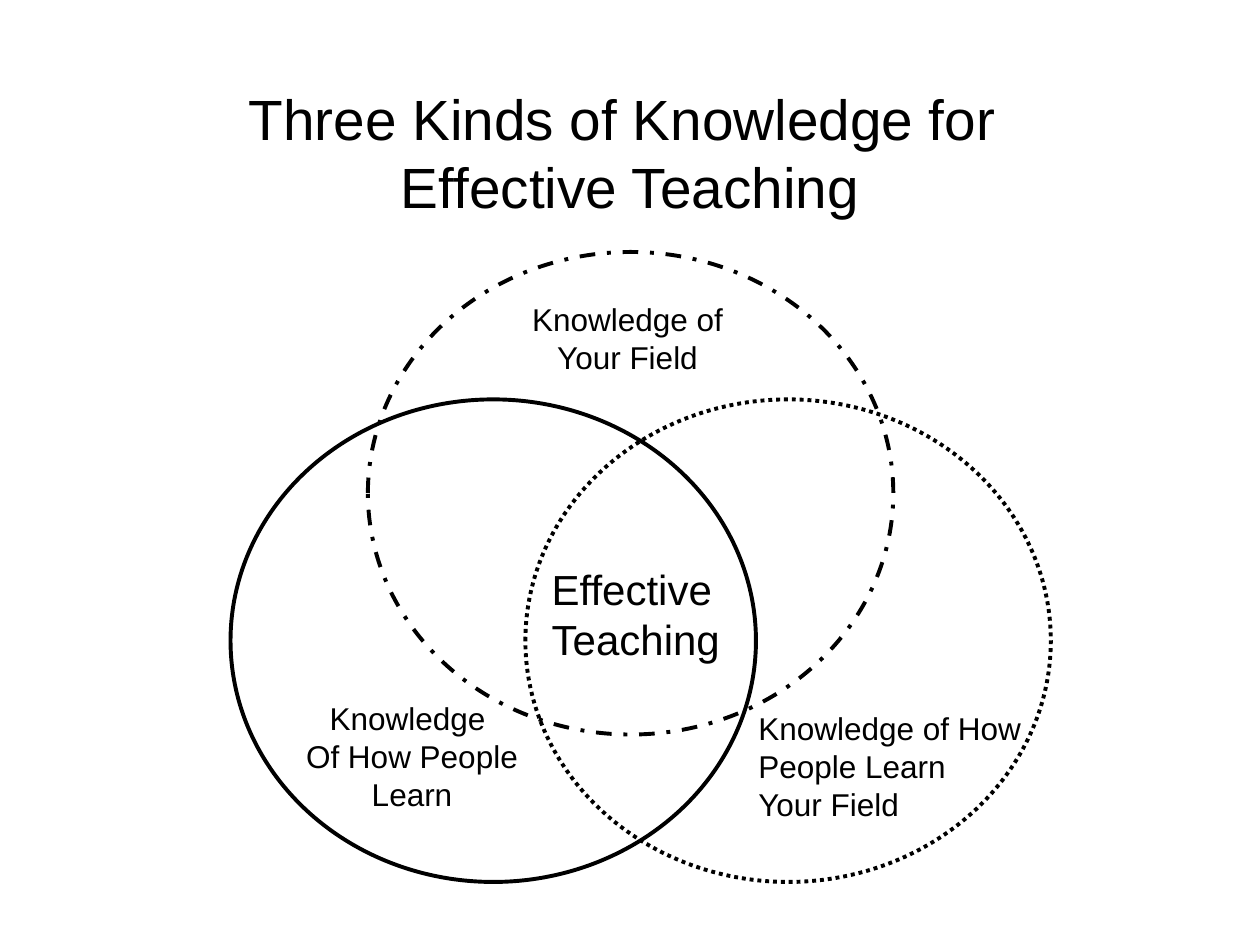
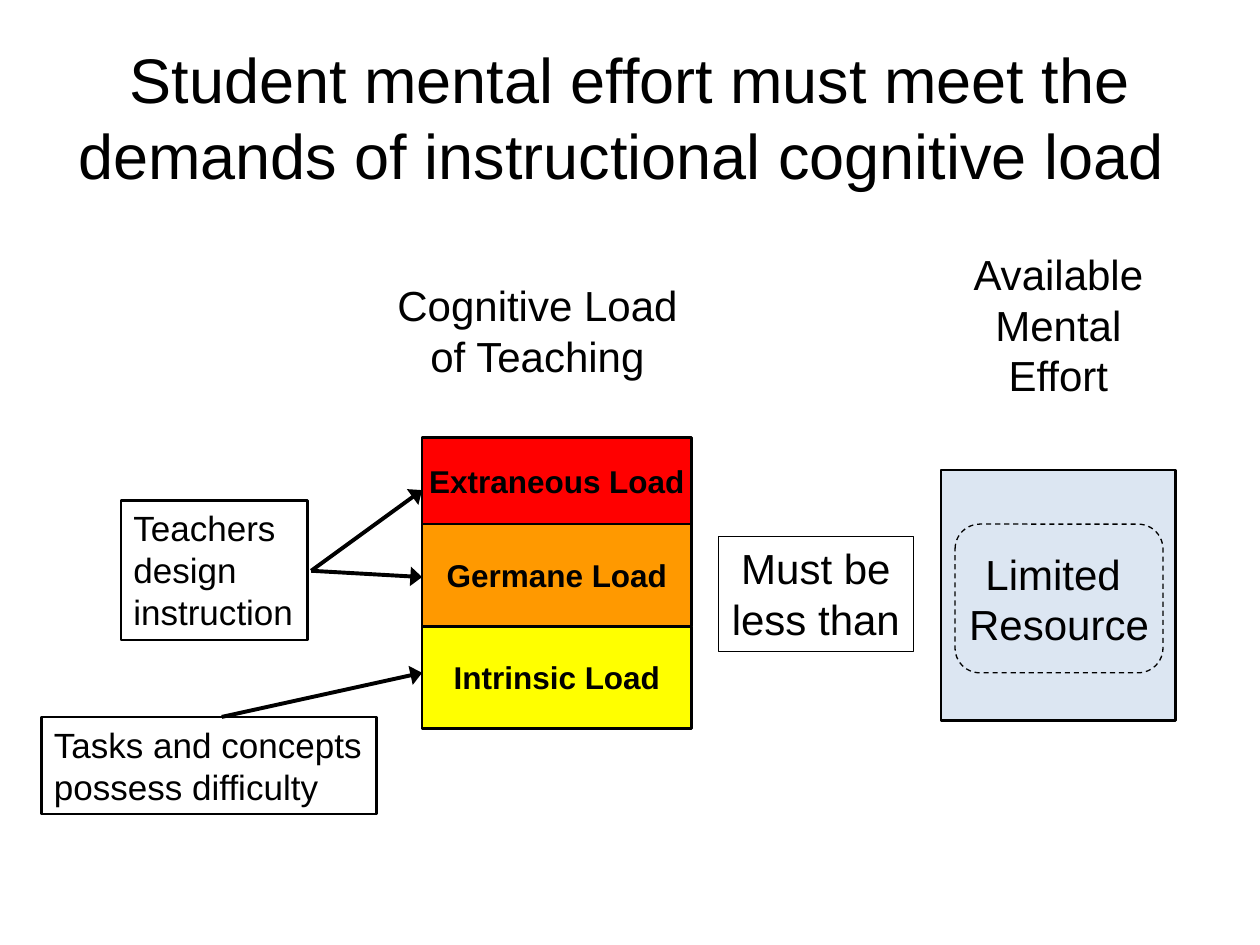
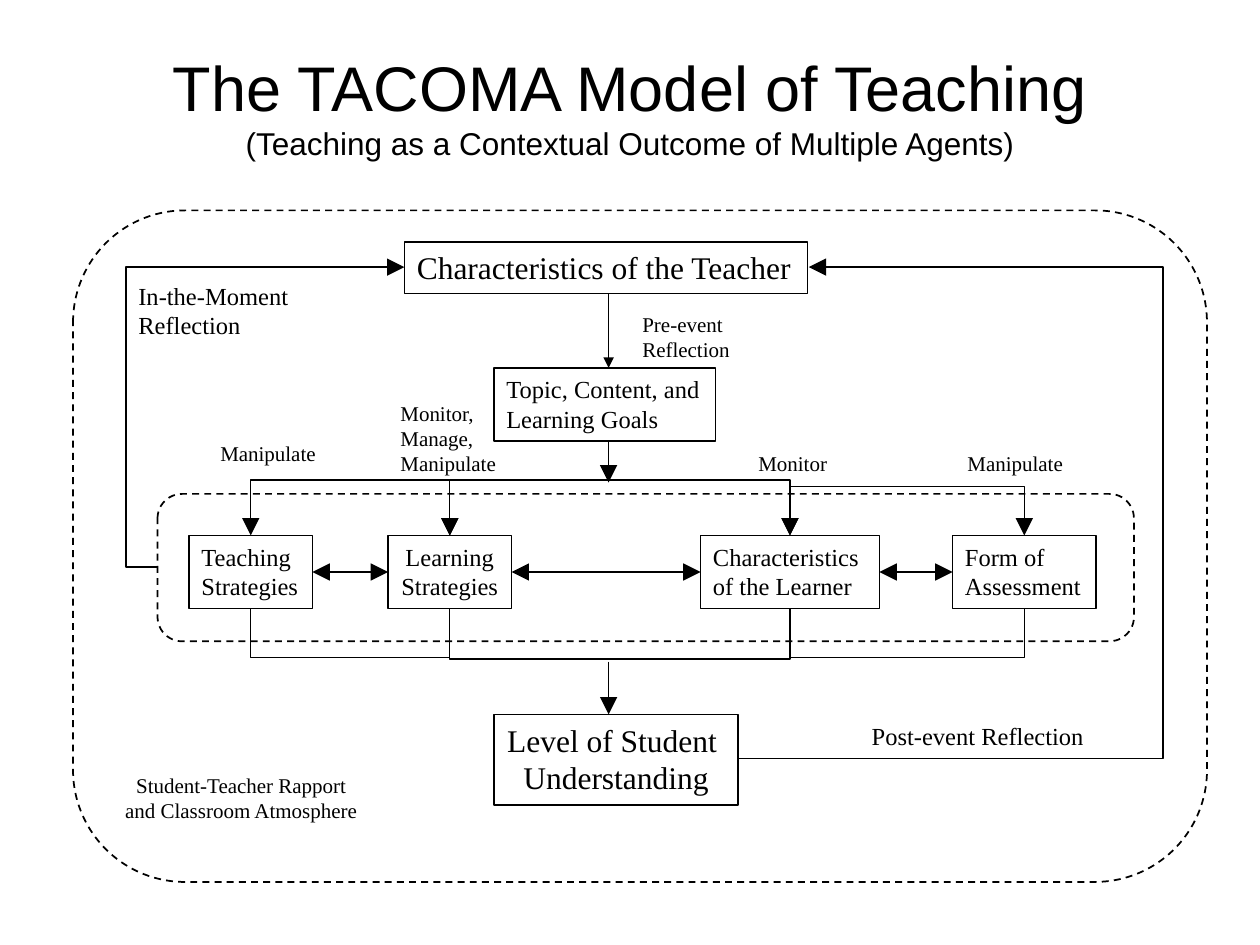
from pptx import Presentation
from pptx.dml.color import RGBColor
from pptx.enum.dml import MSO_LINE
from pptx.enum.shapes import MSO_CONNECTOR, MSO_SHAPE
from pptx.enum.text import MSO_ANCHOR, MSO_AUTO_SIZE, PP_ALIGN
from pptx.oxml.ns import qn
from pptx.util import Inches, Pt
from lxml import etree

BLACK = RGBColor(0x00, 0x00, 0x00)
RED = RGBColor(0xFF, 0x00, 0x00)
ORANGE = RGBColor(0xFF, 0x99, 0x00)
YELLOW = RGBColor(0xFF, 0xFF, 0x00)
PALE_BLUE = RGBColor(0xDC, 0xE6, 0xF2)
SANS, SERIF = "Arial", "Times New Roman"
LEFT, CENTER = PP_ALIGN.LEFT, PP_ALIGN.CENTER
TOP, MIDDLE = MSO_ANCHOR.TOP, MSO_ANCHOR.MIDDLE
GROW, FIXED = MSO_AUTO_SIZE.SHAPE_TO_FIT_TEXT, MSO_AUTO_SIZE.NONE
RECTANGLE, OVAL = MSO_SHAPE.RECTANGLE, MSO_SHAPE.OVAL
ROUNDED = MSO_SHAPE.ROUNDED_RECTANGLE
ALTERNATE = MSO_SHAPE.FLOWCHART_ALTERNATE_PROCESS
STRAIGHT = MSO_CONNECTOR.STRAIGHT
DASH, DASH_DOT, DOT = MSO_LINE.DASH, MSO_LINE.DASH_DOT, MSO_LINE.ROUND_DOT

# Arrowheads as (width, length)
SMALL_HEAD, WIDE_HEAD, LARGE_HEAD = ("med", "med"), ("lg", "med"), ("lg", "lg")

# Slide 1: circles as (left, top, dash), labels as (place, lines, size, alignment)
KNOWLEDGE_TITLE = [("Three Kinds of Knowledge for ", 32.4), ("Effective Teaching", 32.4)]
CIRCLE_SIZE = (4.17, 3.83)
CIRCLES = [(2.92, 2, DASH_DOT), (1.83, 3.17, None), (4.17, 3.17, DOT)]
CIRCLE_LABELS = [
    ((4.28, 4.42, 1.55, 0.91), ["Effective", "Teaching"], 24, LEFT),
    ((4.12, 2.33, 1.72, 0.7), ["Knowledge of", "Your Field"], 18, CENTER),
    ((2.33, 5.5, 1.88, 1), ["Knowledge ", "Of How People", "Learn"], 18, CENTER),
    ((5.92, 5.58, 2.35, 1), ["Knowledge of How", "People Learn", "Your Field"], 18, LEFT),
]

# Slide 2
EFFORT_TITLE = [("Student mental effort must meet the demands of instructional cognitive load ", 36)]
SOURCES = [
    ((0.96, 3.97, 1.48, 1.11), ["Teachers", "design", "instruction"]),
    ((0.33, 5.69, 2.66, 0.77), ["Tasks and concepts", "possess difficulty"]),
]
LOAD_LEFT, LOAD_TOP, LOAD_WIDTH = 3.35, 3.47, 2.14
LOADS = [  # name, height, fill, where its arrow starts, height of the arrow's tip
    ("Extraneous Load", 0.69, RED, (2.47, 4.53), 3.89),
    ("Germane Load", 0.81, ORANGE, (2.47, 4.53), 4.58),
    ("Intrinsic Load", 0.81, YELLOW, (1.76, 5.69), 5.34),
]

# Slide 3: boxes as (place, lines, size, alignment, line width)
MODEL_TITLE = [("The TACOMA Model of Teaching", 36),
               ("(Teaching as a Contextual Outcome of Multiple Agents)", 18)]
MODEL_BOXES = [
    ((3.92, 2.92, 1.76, 0.58), ["Topic, Content, and", "Learning Goals"], 14, LEFT, 1),
    ((3.92, 5.67, 1.94, 0.72), ["Level of Student ", "Understanding"], 18, CENTER, 1),
    ((3.21, 1.92, 3.2, 0.41), ["Characteristics of the Teacher"], 18, LEFT, 0.75),
]
AGENT_TOP, AGENT_HEIGHT = 4.25, 0.58
AGENTS = [  # left, width, lines, alignment, line width
    (1.5, 0.98, ["Teaching", "Strategies"], LEFT, 1),
    (3.08, 0.98, ["Learning", "Strategies"], CENTER, 0.75),
    (5.56, 1.42, ["Characteristics", "of the Learner"], LEFT, 1),
    (7.56, 1.14, ["Form of", "Assessment"], LEFT, 1),
]
MODEL_LABELS = [  # place, lines, size, alignment, wrap
    ((6.82, 5.67, 2.1, 0.33), ["Post-event Reflection"], 14, LEFT, True),
    ((1.65, 3.45, 0.96, 0.3), ["Manipulate"], 12, LEFT, False),
    ((3.08, 3.13, 0.96, 0.7), ["Monitor,", "Manage,", "Manipulate"], 12, LEFT, False),
    ((5.92, 3.53, 0.75, 0.3), ["Monitor"], 12, LEFT, False),
    ((7.58, 3.53, 0.96, 0.3), ["Manipulate"], 12, LEFT, False),
    ((0.83, 6.08, 2.17, 0.5), ["Student-Teacher Rapport", "and Classroom Atmosphere"], 12, CENTER, True),
    ((1, 2.18, 1.44, 0.57), ["In-the-Moment", "Reflection"], 14, LEFT, False),
    ((5, 2.42, 0.9, 0.5), ["Pre-event", "Reflection"], 12, LEFT, True),
]
FLOW_X = 4.83
FLOW_STEPS = [(2.33, 2.92, SMALL_HEAD), (3.5, 3.83, LARGE_HEAD), (5.25, 5.67, LARGE_HEAD)]
UPPER_BENDS, LOWER_BENDS = (3.81, 3.81, 3.86), (5.22, 5.23, 5.22)
FEEDBACK_LOOPS = [
    [(5.86, 6.02), (9.23, 6.02), (9.23, 2.12), (6.42, 2.12)],
    [(1.25, 4.5), (1, 4.5), (1, 2.12), (3.21, 2.12)],
]


def inches(values):
    return [Inches(value) for value in values]


def add_span(para, text, size, font, bold=False):
    span = para.add_run()
    span.text = text
    span.font.name, span.font.size, span.font.bold = font, Pt(size), bold
    span.font.color.rgb = BLACK


def write_lines(box, lines, size, align=CENTER, font=SANS, anchor=TOP,
                wrap=False, fit=GROW, bold=False):
    """Fill a box with one paragraph per line."""
    frame = box.text_frame
    frame.word_wrap, frame.auto_size, frame.vertical_anchor = wrap, fit, anchor
    for number, line in enumerate(lines):
        para = frame.add_paragraph() if number else frame.paragraphs[0]
        para.alignment = align
        add_span(para, line, size, font, bold)


def add_label(page, place, lines, size, align=CENTER, **style):
    box = page.shapes.add_textbox(*inches(place))
    write_lines(box, lines, size, align, **style)


def add_title(page, place, lines):
    """Add a centred title whose lines share one paragraph."""
    box = page.shapes.add_textbox(*inches(place))
    frame = box.text_frame
    frame.word_wrap, frame.vertical_anchor = True, MIDDLE
    para = frame.paragraphs[0]
    para.alignment = CENTER
    for number, (text, size) in enumerate(lines):
        if number:
            para.add_line_break()
        add_span(para, text, size, SANS)


def draw_outline(shape, width, dash=None):
    shape.line.color.rgb = BLACK
    shape.line.width = Pt(width)
    if dash:
        shape.line.dash_style = dash


def add_box(page, place, width, kind=RECTANGLE, fill=None, dash=None):
    box = page.shapes.add_shape(kind, *inches(place))
    box.shadow.inherit = False
    if fill is None:
        box.fill.background()
    else:
        box.fill.solid()
        box.fill.fore_color.rgb = fill
    draw_outline(box, width, dash)
    return box


def add_arrowheads(shape, ends, head):
    outline = shape.element.spPr.find(qn("a:ln"))
    width, length = head
    for end in ends:
        etree.SubElement(outline, qn(f"a:{end}End"), type="triangle", w=width, len=length)


def add_arrow(page, start, end, width, ends=("tail",), head=LARGE_HEAD):
    arrow = page.shapes.add_connector(STRAIGHT, *inches(start + end))
    draw_outline(arrow, width)
    add_arrowheads(arrow, ends, head)
    etree.SubElement(arrow.element.spPr, qn("a:effectLst"))


def add_bent_line(page, points, ends=()):
    start, *corners = [tuple(inches(point)) for point in points]
    builder = page.shapes.build_freeform(*start)
    builder.add_line_segments(corners, close=False)
    bent_line = builder.convert_to_shape()
    bent_line.shadow.inherit = False
    bent_line.fill.background()
    draw_outline(bent_line, 0.75)
    add_arrowheads(bent_line, ends, LARGE_HEAD)


def build_knowledge(page):
    add_title(page, (0.75, 0.58, 8.5, 1.25), KNOWLEDGE_TITLE)
    for left, top, dash in CIRCLES:
        add_box(page, (left, top, *CIRCLE_SIZE), 2.25, OVAL, dash=dash)
    for label in CIRCLE_LABELS:
        add_label(page, *label)


def build_effort(page):
    add_title(page, (0.5, 0.3, 9, 1.25), EFFORT_TITLE)
    for place, lines in SOURCES:
        write_lines(add_box(page, place, 1.5), lines, 20, LEFT)

    add_box(page, (7.47, 3.73, 1.86, 1.99), 1.5, fill=PALE_BLUE)
    resource = add_box(page, (7.58, 4.16, 1.65, 1.18), 0.75, ROUNDED, PALE_BLUE, DASH)
    write_lines(resource, ["Limited ", "Resource"], 24, anchor=MIDDLE, fit=FIXED)

    top = LOAD_TOP
    for name, height, fill, start, tip in LOADS:
        load = add_box(page, (LOAD_LEFT, top, LOAD_WIDTH, height), 1.5, fill=fill)
        write_lines(load, [name], 18, anchor=MIDDLE, fit=FIXED, bold=True)
        add_arrow(page, start, (LOAD_LEFT, tip), 2.25, head=WIDE_HEAD)
        top += height

    add_label(page, (3.04, 2.17, 2.45, 0.91), ["Cognitive Load", "of Teaching"], 24)
    add_label(page, (7.47, 1.92, 1.86, 1.31), ["Available", "Mental Effort"], 24,
              anchor=MIDDLE, wrap=True)
    comparison = add_box(page, (5.7, 4.26, 1.55, 0.91), 0.75)
    write_lines(comparison, ["Must be", "less than"], 24)


def build_model(page):
    both_ends = ("head", "tail")
    add_title(page, (0.75, 0.42, 8.5, 0.83), MODEL_TITLE)
    add_box(page, (0.58, 1.67, 9, 5.33), 1, ROUNDED, dash=DASH)
    add_box(page, (1.25, 3.92, 7.75, 1.17), 1, ALTERNATE, dash=DASH)

    agent_boxes = [((left, AGENT_TOP, width, AGENT_HEIGHT), lines, 14, align, outline)
                   for left, width, lines, align, outline in AGENTS]
    for place, lines, size, align, outline in MODEL_BOXES + agent_boxes:
        write_lines(add_box(page, place, outline), lines, size, align, SERIF)
    for place, lines, size, align, wrap in MODEL_LABELS:
        add_label(page, place, lines, size, align, font=SERIF, wrap=wrap)

    bottom, middle = AGENT_TOP + AGENT_HEIGHT, AGENT_TOP + AGENT_HEIGHT / 2
    for agent, following, upper, lower in zip(AGENTS, AGENTS[1:], UPPER_BENDS, LOWER_BENDS):
        start, end = agent[0] + agent[1] / 2, following[0] + following[1] / 2
        for edge, bend, ends in ((AGENT_TOP, upper, both_ends), (bottom, lower, ())):
            add_bent_line(page, [(start, edge), (start, bend), (end, bend), (end, edge)], ends)
        add_arrow(page, (agent[0] + agent[1], middle), (following[0], middle), 0.75, both_ends)

    for top, end, head in FLOW_STEPS:
        add_arrow(page, (FLOW_X, top), (FLOW_X, end), 0.75, head=head)
    for points in FEEDBACK_LOOPS:
        add_bent_line(page, points, ("tail",))


def main():
    deck = Presentation()
    deck.slide_width, deck.slide_height = Inches(10), Inches(7.5)
    blank = deck.slide_layouts[6]
    for build in (build_knowledge, build_effort, build_model):
        build(deck.slides.add_slide(blank))
    deck.save("out.pptx")


if __name__ == "__main__":
    main()
